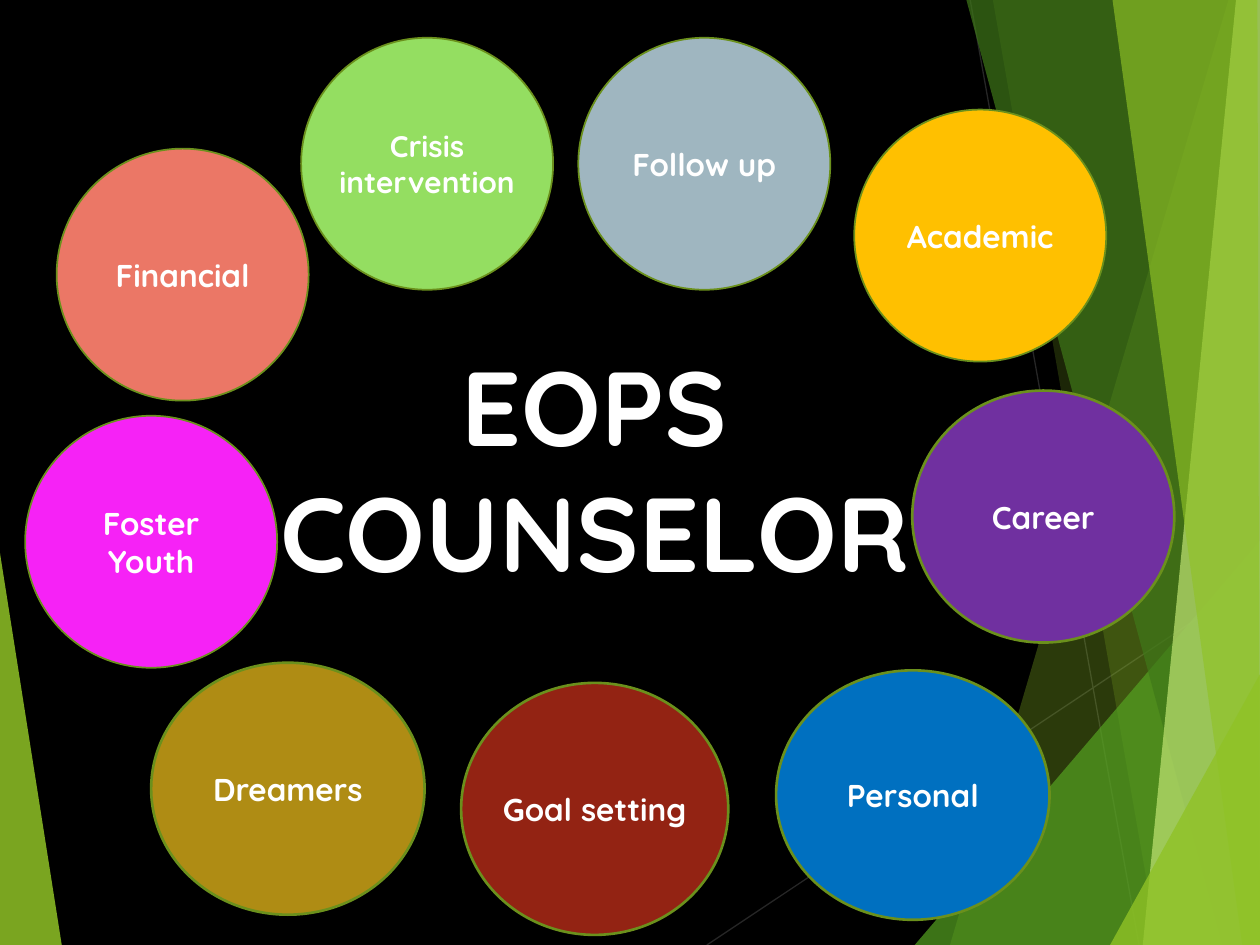
from lxml import etree
from pptx import Presentation
from pptx.dml.color import RGBColor
from pptx.enum.shapes import MSO_CONNECTOR, MSO_SHAPE
from pptx.enum.text import MSO_ANCHOR, PP_ALIGN
from pptx.oxml.ns import qn
from pptx.util import Inches, Pt

OVAL = MSO_SHAPE.OVAL
STRAIGHT = MSO_CONNECTOR.STRAIGHT
MIDDLE, TOP = MSO_ANCHOR.MIDDLE, MSO_ANCHOR.TOP
CENTER = PP_ALIGN.CENTER

WIDTH, HEIGHT = 10, 7.5
BACKGROUND, WHITE = "000000", "FFFFFF"
OUTLINE, RAY = "6B901C", "262626"

RAYS = [(5.61, 7.5, 10.01, 4.57), (7.7, 0, 9.04, 7.5)]

FACETS = [
    ([(0, 4.39), (0.49, HEIGHT), (0, HEIGHT)], "90C226", 85),
    ([(9.75, 0), (7.54, HEIGHT), (WIDTH, HEIGHT), (WIDTH, 0)], "90C226", 30),
    ([(7.88, 0), (9.19, HEIGHT), (WIDTH, HEIGHT), (WIDTH, 0)], "90C226", 20),
    ([(7.26, HEIGHT), (WIDTH, 4.29), (WIDTH, HEIGHT)], "54A021", 72),
    ([(7.67, 0), (9.7, HEIGHT), (WIDTH, HEIGHT), (WIDTH, 0)], "3F7819", 70),
    ([(9.81, 0), (9.07, HEIGHT), (WIDTH, HEIGHT), (WIDTH, 0)], "C0E474", 70),
    ([(8.83, 0), (9.86, HEIGHT), (WIDTH, HEIGHT), (9.98, 0)], "90C226", 65),
    ([(8.81, HEIGHT), (WIDTH, 5.35), (WIDTH, HEIGHT)], "90C226", 80),
]

TITLE = ("EOPS COUNSELOR", (2.09, 2.66, 5.26, 2.12), 60)

LOWER_CIRCLES = [
    ("Dreamers", (1.2, 5.26, 2.17, 2), "AF8C14", 1.5, 18),
    ("Personal", (6.16, 5.32, 2.17, 1.98), "0070C0", 1.5, 18),
    ("Goal setting", (3.66, 5.42, 2.12, 2), "932313", 1.5, 18),
    ("Career", (7.24, 3.1, 2.08, 2), "7030A0", 1.5, 18),
    ("Foster Youth", (0.2, 3.3, 2, 2), "F622F6", 1, 18),
    ("Financial", (0.45, 1.18, 2, 2), "EB7766", 1, 18),
]
UPPER_CIRCLES = [
    ("Academic", (6.78, 0.87, 2, 2), "FFC000", 1, 18),
    ("Follow up", (4.59, 0.3, 2, 2), "9FB6C0", 1, 18),
    ("Crisis intervention", (2.39, 0.3, 2, 2), "94DE61", 1, 17),
]


def color(value):
    return RGBColor.from_string(value)


def paint(target, value):
    target.solid()
    target.fore_color.rgb = color(value)


def write(shape, text, size, frame_format):
    frame = shape.text_frame
    for name, value in frame_format.items():
        setattr(frame, name, value)
    paragraph = frame.paragraphs[0]
    paragraph.alignment = CENTER
    run = paragraph.add_run()
    run.text = text
    for name, value in {"name": "Quicksand", "size": Pt(size), "bold": True}.items():
        setattr(run.font, name, value)
    run.font.color.rgb = color(WHITE)


def add_ray(slide, ends):
    ray = slide.shapes.add_connector(STRAIGHT, *map(Inches, ends))
    ray.line.color.rgb = color(RAY)
    ray.line.width = Pt(0.75)
    etree.SubElement(ray._element.spPr, qn("a:effectLst"))


def add_facet(slide, points, fill, opacity):
    start, *rest = [(Inches(x), Inches(y)) for x, y in points]
    builder = slide.shapes.build_freeform(*start)
    builder.add_line_segments(rest, close=True)
    shape = builder.convert_to_shape()
    shape.shadow.inherit = False
    paint(shape.fill, fill)
    shape.line.fill.background()
    tint = shape._element.spPr.find(qn("a:solidFill"))[0]
    etree.SubElement(tint, qn("a:alpha")).set("val", str(opacity * 1000))


def add_circle(slide, text, box, fill, line_width, size):
    shape = slide.shapes.add_shape(OVAL, *map(Inches, box))
    shape.shadow.inherit = False
    paint(shape.fill, fill)
    shape.line.color.rgb = color(OUTLINE)
    shape.line.width = Pt(line_width)
    frame_format = {"word_wrap": True, "vertical_anchor": MIDDLE}
    for side in ("left", "top", "right", "bottom"):
        frame_format[f"margin_{side}"] = 0
    write(shape, text, size, frame_format)


def main():
    presentation = Presentation()
    presentation.slide_width = Inches(WIDTH)
    presentation.slide_height = Inches(HEIGHT)
    slide = presentation.slides.add_slide(presentation.slide_layouts[6])
    paint(slide.background.fill, BACKGROUND)
    for ends in RAYS:
        add_ray(slide, ends)
    for facet in FACETS:
        add_facet(slide, *facet)
    for circle in LOWER_CIRCLES:
        add_circle(slide, *circle)
    text, box, size = TITLE
    title = slide.shapes.add_textbox(*map(Inches, box))
    write(title, text, size, {"word_wrap": True, "vertical_anchor": TOP})
    for circle in UPPER_CIRCLES:
        add_circle(slide, *circle)
    presentation.save("out.pptx")


if __name__ == "__main__":
    main()
